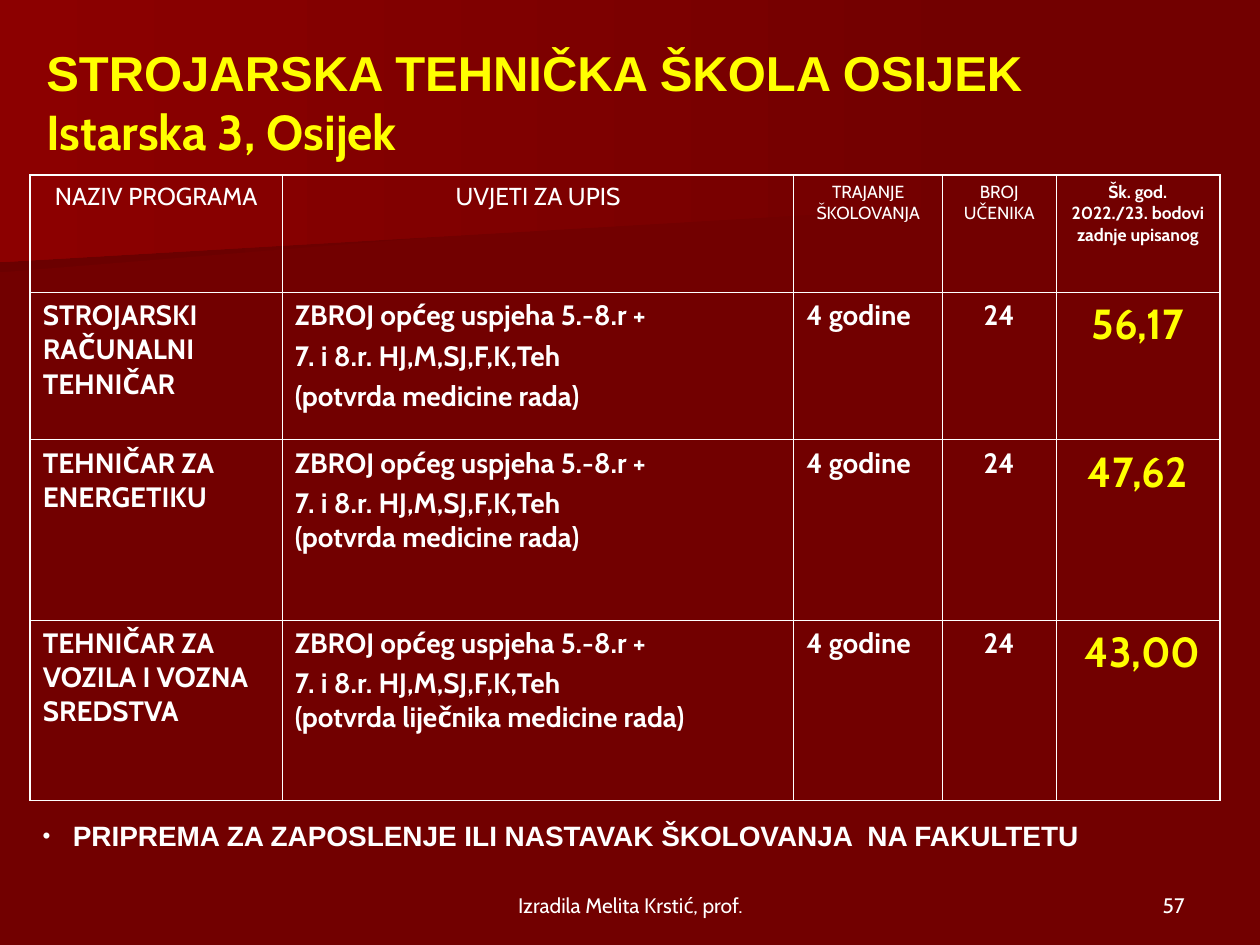
from dataclasses import dataclass

import pptx
import pptx.dml.color
import pptx.enum.text
import pptx.oxml
import pptx.oxml.ns
import pptx.util

Inches = pptx.util.Inches
Pt = pptx.util.Pt
ALIGN = pptx.enum.text.PP_ALIGN
ANCHOR = pptx.enum.text.MSO_ANCHOR
WHITE, YELLOW = "FFFFFF", "FFFF00"
THIN, THICK = 0.45, 1.08


@dataclass
class Para:
    text: str
    size: float
    bold: bool = False
    color: str = WHITE
    font: str = "Cabin"
    align: ALIGN = ALIGN.LEFT
    before: float = 0
    spacing: float = 1.0


@dataclass
class Band:
    points: list[tuple[float, float]]
    start: str
    end: str


@dataclass
class Program:
    name: str
    note: str
    note_before: float
    score: str


def rgb(value: str) -> pptx.dml.color.RGBColor:
    return pptx.dml.color.RGBColor.from_string(value)


def write(tf, paras: list[Para]) -> None:
    for i, para in enumerate(paras):
        p = tf.add_paragraph() if i else tf.paragraphs[0]
        p.text = para.text
        p.alignment = para.align
        p.space_before = Pt(para.before)
        p.line_spacing = para.spacing
        p.font.name = para.font
        p.font.size = Pt(para.size)
        p.font.bold = para.bold
        p.font.color.rgb = rgb(para.color)


def add_text(slide, box: tuple[float, ...], anchor: ANCHOR, paras: list[Para]):
    tf = slide.shapes.add_textbox(*map(Inches, box)).text_frame
    tf.word_wrap = True
    tf.vertical_anchor = anchor
    write(tf, paras)
    return tf


def add_band(slide, band: Band) -> None:
    points = [(Inches(x), Inches(y)) for x, y in band.points]
    builder = slide.shapes.build_freeform(*points[0], scale=1.0)
    builder.add_line_segments(points[1:], close=True)
    sp = builder.convert_to_shape()
    sp.shadow.inherit = False
    sp.line.fill.background()
    sp.fill.gradient()
    sp.fill.gradient_angle = 180
    for stop, color, position in zip(sp.fill.gradient_stops, (band.start, band.end), (0, 1)):
        stop.color.rgb = rgb(color)
        stop.position = position


def set_borders(cell, widths: dict[str, float]) -> None:
    tc_pr = cell._tc.get_or_add_tcPr()
    for i, (side, width) in enumerate(widths.items()):
        line = pptx.oxml.parse_xml(
            f'<a:ln{side} {pptx.oxml.ns.nsdecls("a")} w="{Pt(width)}">'
            f'<a:solidFill><a:srgbClr val="{WHITE}"/></a:solidFill></a:ln{side}>'
        )
        tc_pr.insert(i, line)


def add_bullet(p, indent: float) -> None:
    p_pr = p._p.get_or_add_pPr()
    p_pr.set("marL", str(Inches(indent)))
    p_pr.set("indent", str(-Inches(indent)))
    for xml in (
        f'<a:buClr {{ns}}><a:srgbClr val="{WHITE}"/></a:buClr>',
        '<a:buSzPct {ns} val="80000"/>',
        '<a:buFont {ns} typeface="Arial"/>',
        '<a:buChar {ns} char="•"/>',
    ):
        element = pptx.oxml.parse_xml(xml.format(ns=pptx.oxml.ns.nsdecls("a")))
        p_pr.insert_element_before(element, "a:tabLst", "a:defRPr", "a:extLst")


def heading(text: str, size: float, bold: bool = False) -> list[Para]:
    return [Para(text, size, bold, align=ALIGN.CENTER, before=size / 4, spacing=1.01)]


def body(text: str, before: float = 4, **style) -> Para:
    return Para(text, **{"size": 16, "bold": True, "before": before, "spacing": 1.01, **style})


def program_row(program: Program) -> list[list[Para]]:
    return [
        [body(program.name)],
        [
            body("ZBROJ općeg uspjeha 5.-8.r +", 3.5),
            body("7. i 8.r. HJ,M,SJ,F,K,Teh", 3.5),
            body(program.note, program.note_before),
        ],
        [body("4 godine")],
        [body("24", align=ALIGN.CENTER)],
        [body(program.score, size=24, color=YELLOW, align=ALIGN.CENTER)],
    ]


def add_table(slide, left: float, top: float, widths: list[float],
              heights: list[float], rows: list[list[list[Para]]]) -> None:
    frame = slide.shapes.add_table(
        len(heights), len(widths), Inches(left), Inches(top),
        Inches(sum(widths)), Inches(sum(heights)),
    )
    table = frame.table
    table.first_row = table.horz_banding = False
    for column, width in zip(table.columns, widths):
        column.width = Inches(width)
    for row, height in zip(table.rows, heights):
        row.height = Inches(height)
    last = len(widths) - 1
    for r, row in enumerate(rows):
        for c, paras in enumerate(row):
            cell = table.cell(r, c)
            cell.fill.background()
            write(cell.text_frame, paras)
            set_borders(cell, {
                "L": THIN if c else THICK,
                "R": THICK if c == last else THIN,
                "T": THIN if r else THICK,
                "B": THIN,
            })


BANDS = [
    Band([(7.78, 1.53), (0, 2.16), (0, 1.01), (7.79, 1.01), (7.78, 1.28)], "720000", "6B0000"),
    Band([(7.91, 1.62), (0, 2.08), (0, 0), (7.92, 0)], "720000", "8C0000"),
]
HEADINGS = [
    heading("NAZIV PROGRAMA", 14),
    heading("UVJETI ZA UPIS", 14),
    heading("TRAJANJE ŠKOLOVANJA", 10),
    heading("BROJ UČENIKA", 10),
    heading("Šk. god. 2022./23. bodovi zadnje upisanog", 10, True),
]
PROGRAMS = [
    Program("STROJARSKI RAČUNALNI TEHNIČAR", "(potvrda medicine rada)", 3.5, "56,17"),
    Program("TEHNIČAR ZA ENERGETIKU", "(potvrda medicine rada)", 0, "47,62"),
    Program("TEHNIČAR ZA VOZILA I VOZNA SREDSTVA", "(potvrda liječnika medicine rada)", 0, " 43,00"),
]


def main() -> None:
    prs = pptx.Presentation()
    prs.slide_width, prs.slide_height = Inches(10), Inches(7.5)
    slide = prs.slides.add_slide(prs.slide_layouts[6])
    slide.background.fill.solid()
    slide.background.fill.fore_color.rgb = rgb("720000")
    for band in BANDS:
        add_band(slide, band)
    add_text(slide, (7.17, 6.83, 2.33, 0.5), ANCHOR.BOTTOM, [Para("57", 12, align=ALIGN.RIGHT)])
    add_text(slide, (0.27, 0.3, 9.23, 1.01), ANCHOR.MIDDLE, [
        Para("STROJARSKA TEHNIČKA ŠKOLA OSIJEK", 28, True, YELLOW, "Arial"),
        Para("Istarska 3, Osijek", 28, True, YELLOW),
    ])
    add_table(slide, 0.24, 1.39, [2, 4.06, 1.18, 0.9, 1.3], [0.93, 1.17, 1.43, 1.43],
              [HEADINGS, *map(program_row, PROGRAMS)])
    tf = add_text(slide, (0.24, 6.45, 9.53, 0.77), ANCHOR.TOP, [
        Para("PRIPREMA ZA ZAPOSLENJE ILI NASTAVAK ŠKOLOVANJA  NA FAKULTETU",
             16, True, font="Arial", before=10),
    ])
    add_bullet(tf.paragraphs[0], 0.24)
    add_text(slide, (3.42, 6.83, 3.17, 0.5), ANCHOR.BOTTOM,
             [Para("Izradila Melita Krstić, prof.", 12, align=ALIGN.CENTER)])
    prs.save("out.pptx")


if __name__ == "__main__":
    main()
